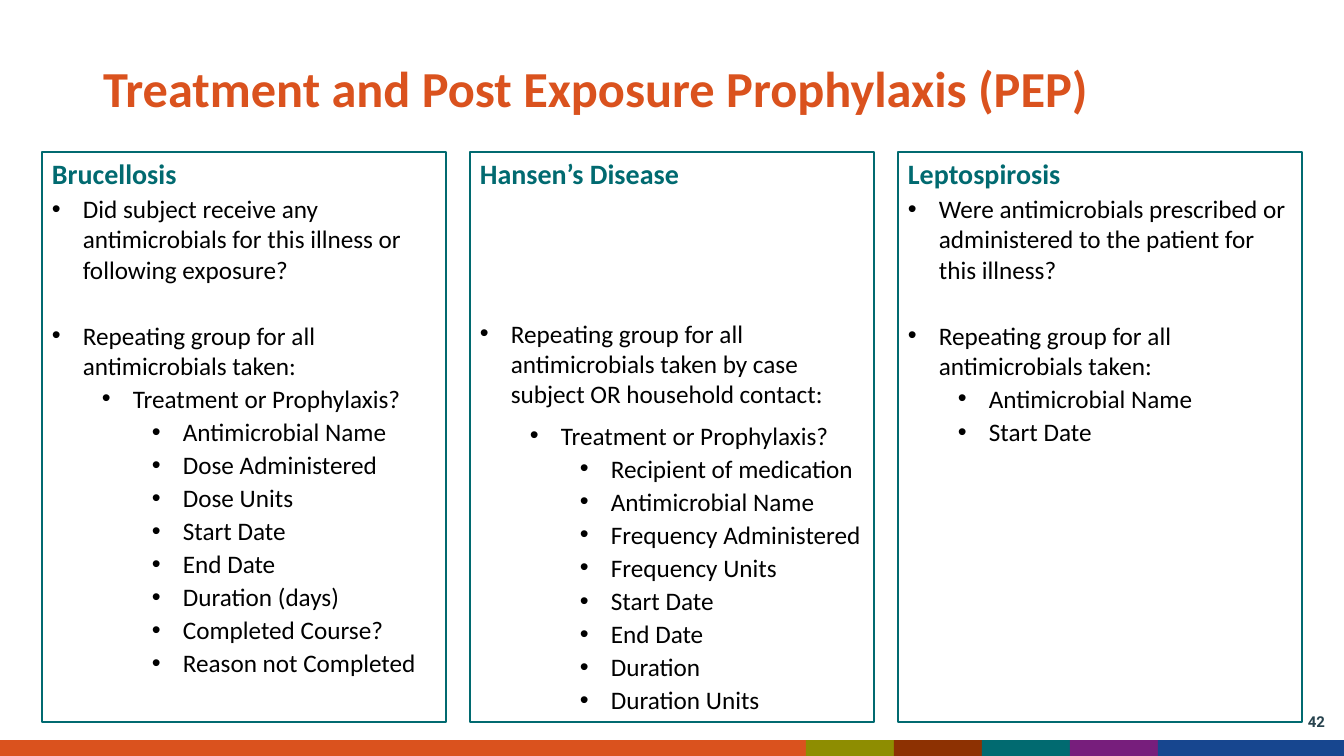
"""Build the treatment and post exposure prophylaxis slide."""
import pptx
import pptx.dml.color
import pptx.enum.shapes
import pptx.enum.text
import pptx.oxml.ns
import pptx.util
import lxml.etree

ORANGE, TEAL, BLACK, SLATE = "DA521E", "016A70", "000000", "28434E"
STRIP_EDGES = [0, 806, 894, 982, 1070, 1158, 1344]
STRIP_COLORS = [ORANGE, "8E8D01", "8D3102", TEAL, "771E7C", "17468F"]
COLUMN_LEFT, COLUMN_PITCH = 42, 428
AFTER_QUESTION, NO_QUESTION = 25.5, 91

COLUMNS = [
    ("Brucellosis", 2, [
        (0, "Did subject receive any antimicrobials for this illness or following exposure?", 2, 0),
        (0, "Repeating group for all antimicrobials taken:", AFTER_QUESTION, 0),
        (1, "Treatment or Prophylaxis?", 2, 0),
        *[(2, text, 2, 0) for text in (
            "Antimicrobial Name", "Dose Administered", "Dose Units", "Start Date",
            "End Date", "Duration (days)", "Completed Course?", "Reason not Completed")],
    ]),
    ("Hansen’s Disease", 0, [
        (0, "Repeating group for all antimicrobials taken by case subject OR household contact:",
         NO_QUESTION, 6),
        (1, "Treatment or Prophylaxis?", 2, 0),
        *[(2, text, 2, 0) for text in (
            "Recipient of medication", "Antimicrobial Name", "Frequency Administered",
            "Frequency Units", "Start Date", "End Date", "Duration", "Duration Units")],
    ]),
    ("Leptospirosis", 0, [
        (0, "Were antimicrobials prescribed or administered to the patient for this illness?", 2, 0),
        (0, "Repeating group for all antimicrobials taken:", AFTER_QUESTION, 0),
        (1, "Antimicrobial Name", 2, 0),
        (1, "Start Date", 2, 0),
    ]),
]


def px(n):
    return pptx.util.Emu(round(n * 12192000 / 1344))


def rgb(color):
    return pptx.dml.color.RGBColor.from_string(color)


class SlideBuilder:
    def __init__(self, slide, font="Calibri"):
        self.s = slide
        self.font = font

    def style(self, p, size, color, bold=False, font=None):
        p.font.name = font or self.font
        p.font.size = pptx.util.Pt(size)
        p.font.bold = bold
        p.font.color.rgb = rgb(color)

    def title(self, text, x, y, w, h):
        sp = self.s.shapes.title
        sp.left, sp.top, sp.width, sp.height = px(x), px(y), px(w), px(h)
        tf = sp.text_frame
        tf.text = text
        tf.word_wrap = True
        tf.vertical_anchor = pptx.enum.text.MSO_ANCHOR.MIDDLE
        p = tf.paragraphs[0]
        p.alignment = pptx.enum.text.PP_ALIGN.LEFT
        p.line_spacing = 0.9
        self.style(p, 36, ORANGE, True)

    def rect(self, x, y, w, h, fill=None, line=None):
        sp = self.s.shapes.add_shape(
            pptx.enum.shapes.MSO_SHAPE.RECTANGLE, px(x), px(y), px(w), px(h))
        sp.shadow.inherit = False
        if fill:
            sp.fill.solid()
            sp.fill.fore_color.rgb = rgb(fill)
        else:
            sp.fill.background()
        if line:
            sp.line.color.rgb = rgb(line)
            sp.line.width = pptx.util.Pt(1.5)
        else:
            sp.line.fill.background()
        return sp

    def bullet(self, p, level):
        p.level = level
        pPr = p._p.get_or_add_pPr()
        pPr.set("marL", str(px(31 + 50 * level)))
        pPr.set("indent", str(-px(31)))
        qn = pptx.oxml.ns.qn
        mark_font = lxml.etree.Element(qn("a:buFont"), typeface="Arial")
        mark = lxml.etree.Element(qn("a:buChar"), char="•")
        defaults = pPr.find(qn("a:defRPr"))
        defaults.addprevious(mark_font)
        defaults.addprevious(mark)

    def column(self, x, y, w, h, heading, before, items):
        tf = self.rect(x, y, w, h, line=TEAL).text_frame
        tf.word_wrap = True
        tf.vertical_anchor = pptx.enum.text.MSO_ANCHOR.TOP
        p = tf.paragraphs[0]
        p.text = heading
        p.alignment = pptx.enum.text.PP_ALIGN.LEFT
        p.space_before = pptx.util.Pt(before)
        self.style(p, 20, TEAL, True)
        for level, text, before, after in items:
            p = tf.add_paragraph()
            p.text = text
            p.alignment = pptx.enum.text.PP_ALIGN.LEFT
            p.space_before = pptx.util.Pt(before)
            p.space_after = pptx.util.Pt(after)
            self.style(p, 18, BLACK)
            self.bullet(p, level)

    def page_number(self, text, x, y, w, h):
        tf = self.s.shapes.add_textbox(px(x), px(y), px(w), px(h)).text_frame
        tf.word_wrap = True
        tf.vertical_anchor = pptx.enum.text.MSO_ANCHOR.MIDDLE
        p = tf.paragraphs[0]
        p.text = text
        p.alignment = pptx.enum.text.PP_ALIGN.RIGHT
        self.style(p, 10.7, SLATE, True, "Roboto")


def main():
    prs = pptx.Presentation()
    prs.slide_width, prs.slide_height = px(1344), px(756)
    slide = SlideBuilder(prs.slides.add_slide(prs.slide_layouts[5]))
    for left, right, color in zip(STRIP_EDGES, STRIP_EDGES[1:], STRIP_COLORS):
        slide.rect(left, 740, right - left, 16, fill=color)
    slide.title("Treatment and Post Exposure Prophylaxis (PEP)", 93, 40, 1159, 102)
    for i, (heading, before, items) in enumerate(COLUMNS):
        slide.column(COLUMN_LEFT + i * COLUMN_PITCH, 152, 404, 570, heading, before, items)
    slide.page_number("42", 1268, 702, 67, 40)
    prs.save("out.pptx")


if __name__ == "__main__":
    main()
